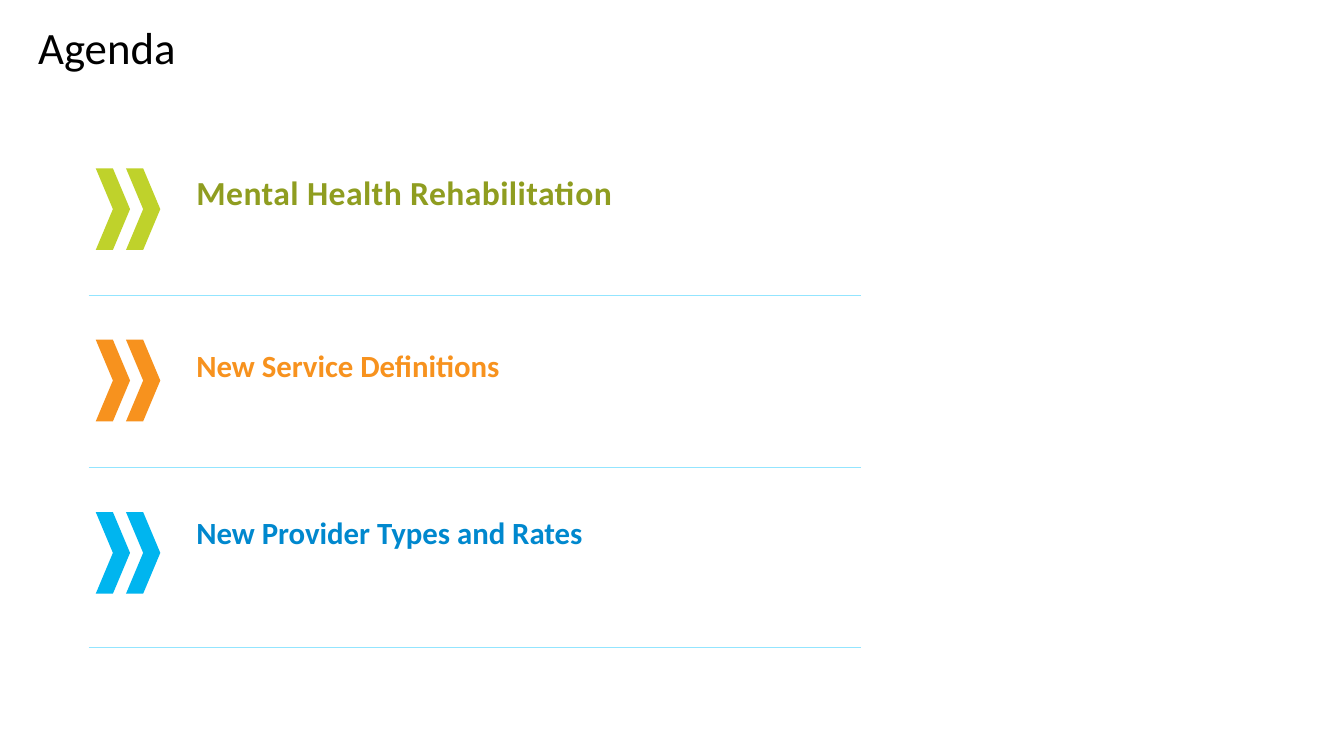
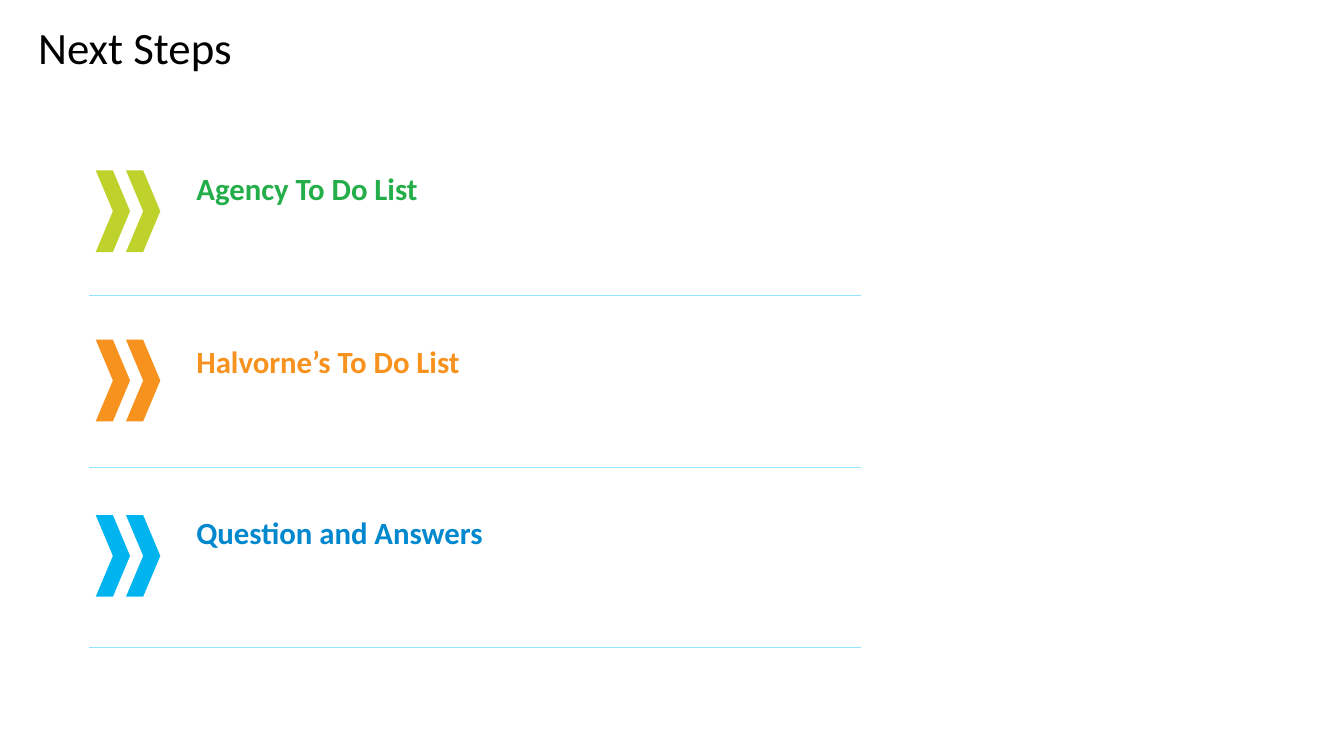
import pptx
import pptx.dml.color
import pptx.enum.shapes
import pptx.enum.text
import pptx.oxml.ns
import pptx.util
import lxml.etree

PX = 9144
FONT = "Calibri"
COLORS = {
    "title": "000000",
    "lime": "BFD22B",
    "olive": "8F9D20",
    "green": "23AE49",
    "orange": "F7921E",
    "sky": "00B5EF",
    "blue": "0088CE",
    "rule": "93E5FF",
}
RULE_TOPS = (293, 464, 642)


def px(n):
    return pptx.util.Emu(n * PX)


def rgb(name):
    return pptx.dml.color.RGBColor.from_string(COLORS[name])


class Deck:
    def __init__(self):
        self.prs = pptx.Presentation()
        self.prs.slide_width = px(1333)
        self.prs.slide_height = px(750)
        self.s = None

    def slide(self, title):
        self.s = self.prs.slides.add_slide(self.prs.slide_layouts[6])
        p = self.text(title, (28, 21, 1103, 124), 32, "title")
        p.line_spacing = 0.9

    def text(self, words, box, size, color, bold=False, spacing=0):
        tf = self.s.shapes.add_textbox(*map(px, box)).text_frame
        tf.word_wrap = True
        tf.vertical_anchor = pptx.enum.text.MSO_ANCHOR.TOP
        p = tf.paragraphs[0]
        r = p.add_run()
        r.text = words
        p.font.name = FONT
        p.font.size = pptx.util.Pt(size)
        p.font.bold = bold
        p.font.color.rgb = rgb(color)
        if spacing:
            r.font._element.set("spc", str(spacing))
        return p

    def chevrons(self, top, color):
        group = self.s.shapes.add_group_shape()
        for left in (95, 125):
            sp = group.shapes.add_shape(
                pptx.enum.shapes.MSO_SHAPE.CHEVRON, px(left), px(top), px(34), px(81))
            sp.shadow.inherit = False
            sp.fill.solid()
            sp.fill.fore_color.rgb = rgb(color)
            sp.line.fill.background()

    def rule(self, top):
        line = self.s.shapes.add_connector(
            pptx.enum.shapes.MSO_CONNECTOR.STRAIGHT, px(88), px(top), px(854), px(top))
        line.line.color.rgb = rgb("rule")
        line.line.width = pptx.util.Pt(0.5)
        lxml.etree.SubElement(line._element.spPr, pptx.oxml.ns.qn("a:effectLst"))

    def item(self, words, text_top, text_color, mark_top, mark_color, size=22, spacing=0):
        height = 50 if size > 22 else 47
        self.text(words, (185, text_top, 620, height), size, text_color, True, spacing)
        self.chevrons(mark_top, mark_color)

    def list_slide(self, title, items):
        self.slide(title)
        for item in items:
            self.item(*item)
        for top in RULE_TOPS:
            self.rule(top)


def main():
    deck = Deck()
    deck.list_slide("Agenda", [
        ("Mental Health Rehabilitation", 166, "olive", 167, "lime", 24, 30),
        ("New Service Definitions", 339, "orange", 337, "orange"),
        ("New Provider Types and Rates", 505, "blue", 508, "sky"),
    ])
    deck.list_slide("Next Steps", [
        ("Agency To Do List", 163, "green", 169, "lime"),
        ("Halvorne’s To Do List", 335, "orange", 337, "orange"),
        ("Question and Answers", 505, "blue", 511, "sky"),
    ])
    deck.prs.save("out.pptx")


if __name__ == "__main__":
    main()
